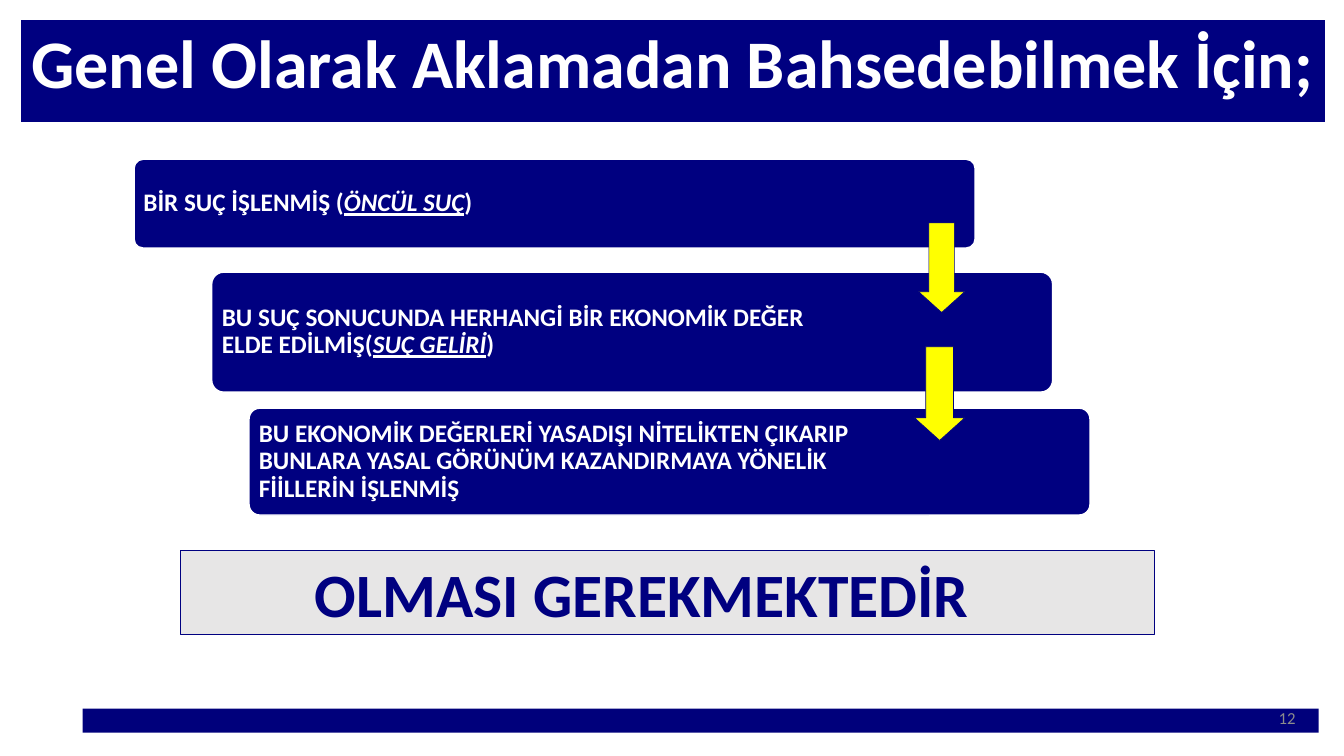
"""Builds the slide on the conditions for money laundering."""
import pptx
import pptx.dml.color
import pptx.enum.shapes
import pptx.enum.text
import pptx.util

COLORS = {"navy": "000080", "footer": "00007B", "white": "FFFFFF",
          "yellow": "FFFF00", "gray": "E7E6E6", "number": "8C8C8C"}
SHAPES = pptx.enum.shapes.MSO_SHAPE
ALIGN = pptx.enum.text.PP_ALIGN

presentation = pptx.Presentation()
presentation.slide_width = pptx.util.Inches(13.33)
presentation.slide_height = pptx.util.Inches(7.5)
slide = presentation.slides.add_slide(presentation.slide_layouts[6])
column = presentation.slide_width / 100
row = presentation.slide_height / 100


def add_block(kind, left, top, width, height, fill=None, line=None, line_width=1):
    shape = slide.shapes.add_shape(kind, round(left * column), round(top * row),
                                   round(width * column), round(height * row))
    shape.shadow.inherit = False
    for part, color in ((shape.fill, fill), (shape.line.fill, line)):
        if color:
            part.solid()
            part.fore_color.rgb = pptx.dml.color.RGBColor.from_string(COLORS[color])
        else:
            part.background()
    if line:
        shape.line.width = pptx.util.Pt(line_width)
    return shape


def write(shape, runs, size, color, bold=True, align=ALIGN.LEFT, spacing=1.0):
    frame = shape.text_frame
    frame.word_wrap = True
    frame.vertical_anchor = pptx.enum.text.MSO_ANCHOR.MIDDLE
    paragraph = frame.paragraphs[0]
    paragraph.alignment = align
    paragraph.line_spacing = spacing
    for text, emphasis in runs:
        run = paragraph.add_run()
        run.text = text
        font = run.font
        font.name = "Calibri"
        font.size = pptx.util.Pt(size)
        font.bold = bold
        font.color.rgb = pptx.dml.color.RGBColor.from_string(COLORS[color])
        if emphasis:
            font.italic = font.underline = True
    return frame


add_block(SHAPES.RECTANGLE, 6.15, 93.73, 91.97, 3.2, "footer")

steps = [
    (9.98, 21.07, 11.73,
     [("BİR SUÇ İŞLENMİŞ (", False), ("ÖNCÜL SUÇ", True), (")", False)]),
    (15.75, 36, 15.87,
     [("BU SUÇ SONUCUNDA HERHANGİ BİR EKONOMİK DEĞER ELDE EDİLMİŞ(", False),
      ("SUÇ GELİRİ", True), (")", False)]),
    (18.53, 54, 14.13,
     [("BU EKONOMİK DEĞERLERİ YASADIŞI NİTELİKTEN ÇIKARIP BUNLARA YASAL "
       "GÖRÜNÜM KAZANDIRMAYA YÖNELİK FİİLLERİN İŞLENMİŞ", False)]),
]
for left, top, height, runs in steps:
    step = add_block(SHAPES.ROUNDED_RECTANGLE, left, top, 62.57, height, "navy", "white")
    step.adjustments[0] = 0.1
    frame = write(step, runs, 18, "white", spacing=0.9)
    frame.margin_left = frame.margin_top = frame.margin_bottom = round(0.5 * column)
    frame.margin_right = round(16.6 * column)

for left, top, width, height in [(68.34, 29.47, 3.45, 11.87), (68.04, 45.87, 3.75, 12.4)]:
    arrow = add_block(SHAPES.DOWN_ARROW, left, top, width, height, "yellow", "navy", 0.5)
    arrow.adjustments[0] = 0.55
    arrow.adjustments[1] = 0.45

conclusion = add_block(SHAPES.RECTANGLE, 13.43, 72.8, 72.47, 11.2, "gray", "navy", 0.75)
frame = write(conclusion, [("OLMASI GEREKMEKTEDİR", False)], 44, "navy")
frame.margin_left = round(10 * column)

number = add_block(SHAPES.RECTANGLE, 74.64, 92.27, 22.51, 5.33)
write(number, [("12", False)], 12, "number", bold=False, align=ALIGN.RIGHT)

title = add_block(SHAPES.RECTANGLE, 1.58, 2.67, 97, 13.47, "navy")
frame = write(title, [("Genel Olarak Aklamadan Bahsedebilmek İçin;", False)],
              48.6, "white", spacing=0.9)
frame.margin_right = 0
frame.margin_bottom = round(1.8 * row)

presentation.save("out.pptx")
